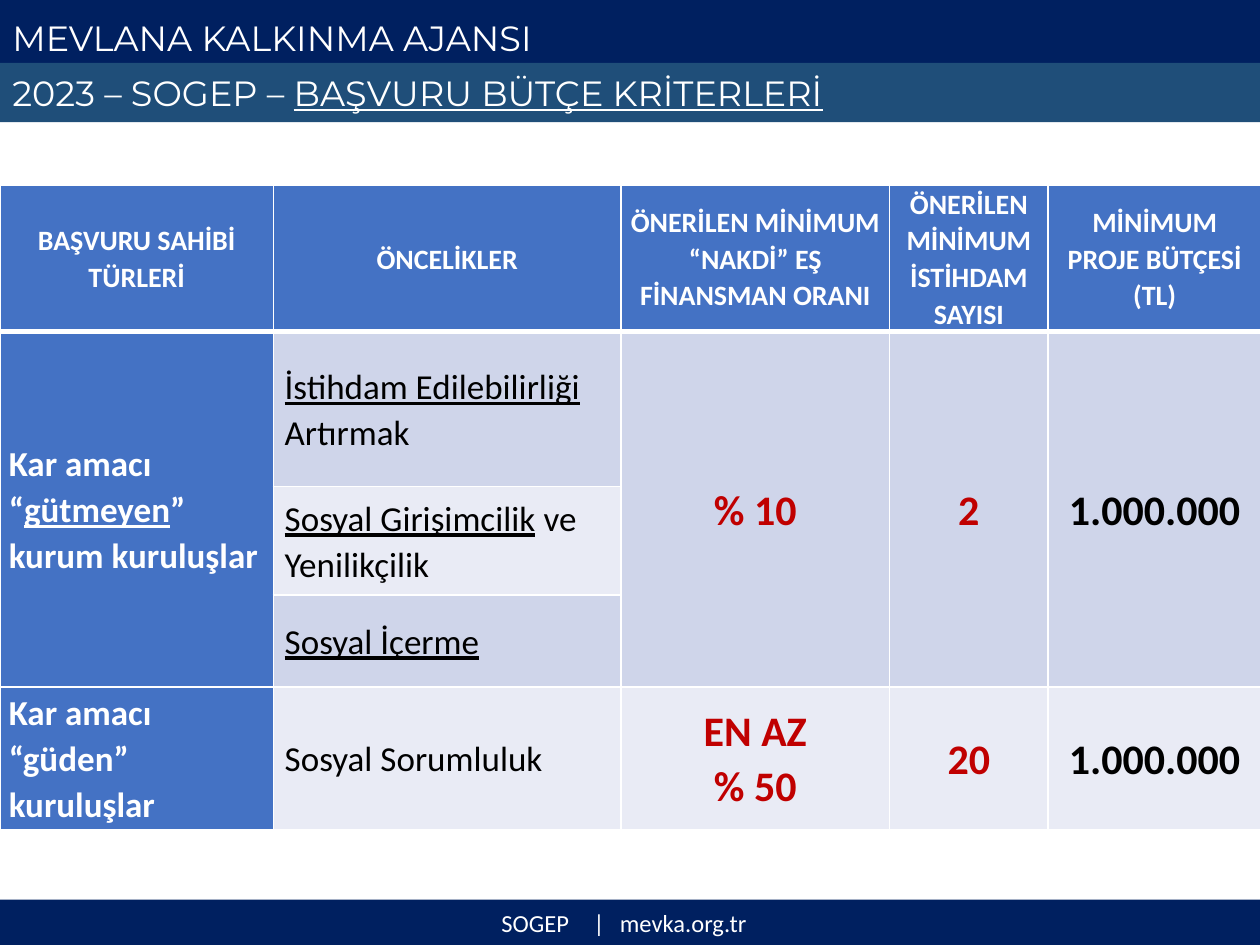
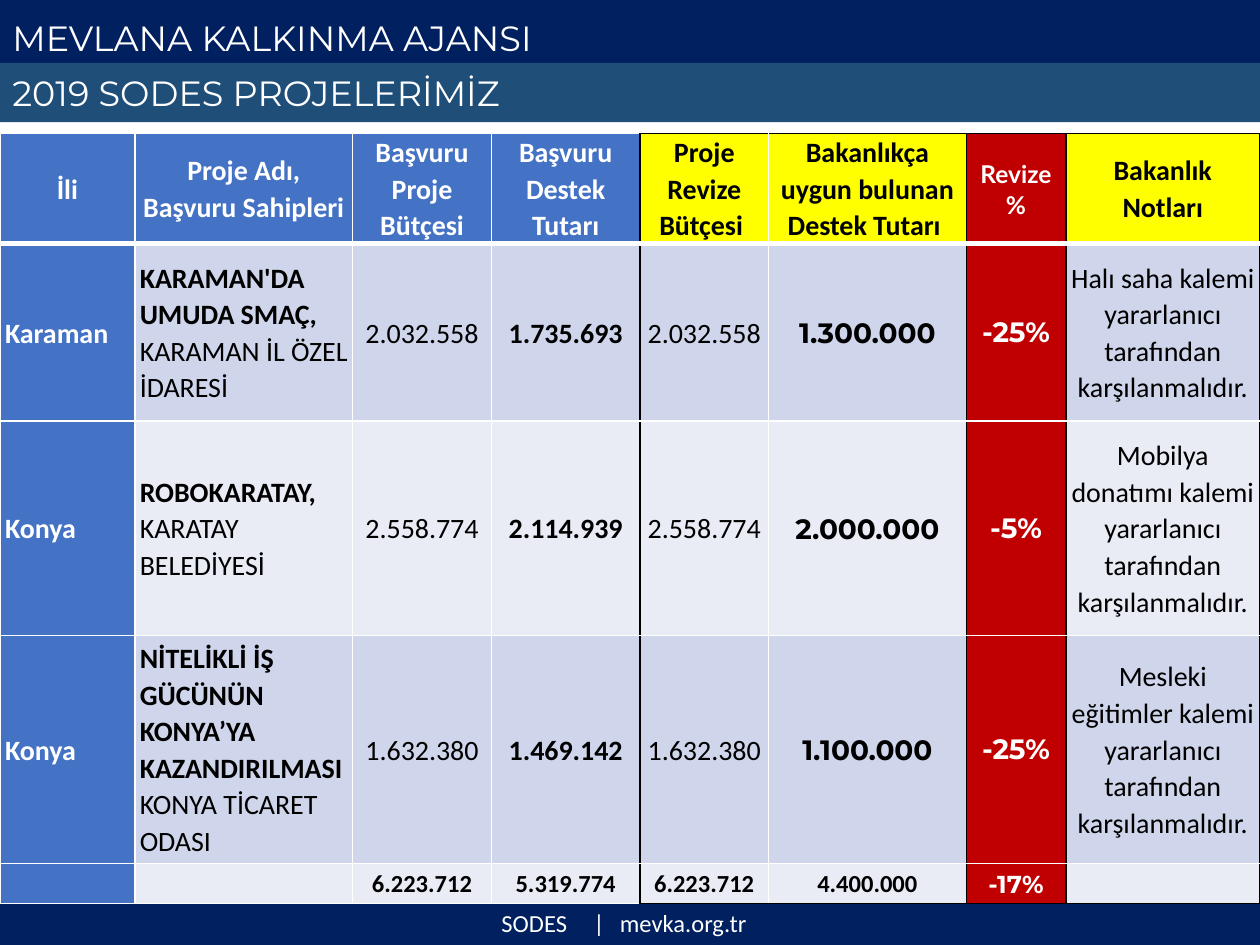
from lxml import etree
from pptx import Presentation
from pptx.dml.color import RGBColor
from pptx.enum.shapes import MSO_SHAPE
from pptx.enum.text import MSO_ANCHOR, PP_ALIGN
from pptx.oxml.ns import qn
from pptx.util import Inches, Pt

RECTANGLE = MSO_SHAPE.RECTANGLE
MIDDLE, BOTTOM = MSO_ANCHOR.MIDDLE, MSO_ANCHOR.BOTTOM
LEFT, CENTER = PP_ALIGN.LEFT, PP_ALIGN.CENTER

COLORS = {
    "navy": "002060", "teal": "1F4E79", "blue": "4472C4", "band_dark": "CFD5EA",
    "band_light": "E9EBF5", "red": "C00000", "yellow": "FFFF00",
    "white": "FFFFFF", "black": "000000",
}
SLIDE_WIDTH, SLIDE_HEIGHT = Inches(10), Inches(7.5)
COLUMN, ROW = SLIDE_WIDTH / 100, SLIDE_HEIGHT / 75

TITLE_BOX = (0, 0, 100, 5.2)
SUBTITLE_BOX = (0, 5, 100, 4.7)
FOOTER_BOX = (0, 71.4, 100, 3.6)
FOOTER_START, FOOTER_STOPS = 39.8, (7.3, 9.4)

HEADING = {"name": "Montserrat", "size": 20, "color": "white"}
FOOTING = {"name": "Calibri", "size": 14, "color": "white"}
TABLE_HEAD = {"name": "Calibri", "size": 16, "color": "white", "bold": True}
BODY = {"name": "Calibri", "size": 16, "color": "black"}
TIGHT = {"line_spacing": 1.07}
CENTERED = {**TIGHT, "alignment": CENTER}


def rgb(name):
    return RGBColor.from_string(COLORS[name])


def grid(box):
    left, top, width, height = box
    return (int(left * COLUMN), int(top * ROW), int(width * COLUMN), int(height * ROW))


def write(frame, paras, font, layout):
    for index, spans in enumerate(paras):
        para = frame.add_paragraph() if index else frame.paragraphs[0]
        for key, value in layout.items():
            setattr(para, key, value)
        for text, changes in spans:
            span = para.add_run()
            span.text = text
            style = {**font, **changes}
            span.font.color.rgb = rgb(style.pop("color"))
            span.font.size = Pt(style.pop("size"))
            for key, value in style.items():
                setattr(span.font, key, value)


def place_band(page, box, fill, spans, font, anchor=MIDDLE, layout=None):
    band = page.shapes.add_shape(RECTANGLE, *grid(box))
    band.shadow.inherit = False
    band.fill.solid()
    band.fill.fore_color.rgb = rgb(fill)
    band.line.fill.background()
    band.text_frame.word_wrap = True
    band.text_frame.vertical_anchor = anchor
    write(band.text_frame, [spans], font, {"alignment": LEFT, **(layout or {})})
    return band


def place_footer(page, box, program):
    text = f"{program}\t|\tmevka.org.tr"
    band = place_band(page, box, "navy", [(text, {})], FOOTING)
    band.text_frame.margin_left = int(FOOTER_START * COLUMN)
    properties = band.text_frame.paragraphs[0]._p.get_or_add_pPr()
    stops = etree.SubElement(properties, qn("a:tabLst"))
    for stop in FOOTER_STOPS:
        etree.SubElement(stops, qn("a:tab"), pos=str(int(stop * COLUMN)), algn="l")


def place_frame(page, subtitle, program):
    place_footer(page, FOOTER_BOX, program)
    place_band(page, TITLE_BOX, "navy", [("MEVLANA KALKINMA AJANSI", {})],
               HEADING, BOTTOM, {"line_spacing": 0.9})
    place_band(page, SUBTITLE_BOX, "teal", subtitle, HEADING)


def place_table(page, box, widths, heights):
    holder = page.shapes.add_table(len(heights), len(widths), *grid(box))
    table = holder.table
    table.first_row = table.horz_banding = False
    for column, width in zip(table.columns, widths):
        column.width = int(width * COLUMN)
    for row, height in zip(table.rows, heights):
        row.height = int(height * ROW)
    return table


def fill_cell(cell, fill, paras, font, layout, margin, indent=0):
    cell.vertical_anchor = MIDDLE
    cell.margin_left = cell.margin_right = int(margin * COLUMN)
    cell.margin_top = cell.margin_bottom = 0
    cell.fill.solid()
    cell.fill.fore_color.rgb = rgb(fill)
    write(cell.text_frame, paras, font, layout)
    for para in cell.text_frame.paragraphs:
        if indent:
            para._p.get_or_add_pPr().set("marL", str(int(indent * COLUMN)))
        if not para.runs:
            para._p.get_or_add_endParaRPr().set("sz", "1400")


def border_cell(cell, sides):
    properties = cell._tc.get_or_add_tcPr()
    for index, side in enumerate("LRTB"):
        color, width = sides[side]
        line = etree.Element(qn(f"a:ln{side}"), w=str(Pt(width)))
        solid = etree.SubElement(line, qn("a:solidFill"))
        etree.SubElement(solid, qn("a:srgbClr"), val=COLORS[color])
        properties.insert(index, line)


def border_table(table, marked_from=None):
    last_row, last_column = len(table.rows) - 1, len(table.columns) - 1
    for r in range(last_row + 1):
        for c in range(last_column + 1):
            sides = {side: ("white", 1) for side in "LRTB"}
            if r == 0:
                sides["B"] = ("white", 3)
            if r == 1:
                sides["T"] = ("white", 3)
            if marked_from is not None:
                dark = {marked_from, marked_from + 2, marked_from + 3, last_column + 1}
                tests = {"L": c in dark, "R": c + 1 in dark,
                         "T": r == 0 and c >= marked_from,
                         "B": r == last_row and c >= marked_from}
                sides.update({side: ("black", 1) for side, hit in tests.items() if hit})
            border_cell(table.cell(r, c), sides)


def place_criteria(page, box):
    margin = 0.7
    table = place_table(page, box, (21.7, 27.6, 21.3, 12.6, 16.9),
                        (11.6, 12.3, 8.6, 7.3, 11.3))
    heads = ("BAŞVURU SAHİBİ TÜRLERİ", "ÖNCELİKLER",
             "ÖNERİLEN MİNİMUM “NAKDİ” EŞ FİNANSMAN ORANI",
             "ÖNERİLEN MİNİMUM İSTİHDAM SAYISI", "MİNİMUM PROJE BÜTÇESİ (TL)")
    for c, head in enumerate(heads):
        fill_cell(table.cell(0, c), "blue", [[(head, {})]], TABLE_HEAD, CENTERED, margin)

    underlined = {"underline": True}
    priorities = (
        [("İstihdam Edilebilirliği", underlined), (" Artırmak", {})],
        [("Sosyal Girişimcilik", underlined), (" ve Yenilikçilik", {})],
        [("Sosyal İçerme", underlined)],
        [("Sosyal Sorumluluk", {})],
    )
    for r, spans in enumerate(priorities, 1):
        fill = "band_dark" if r % 2 else "band_light"
        fill_cell(table.cell(r, 1), fill, [spans], {**BODY, "size": 20}, TIGHT, margin, 0.2)

    groups = (
        (1, "band_dark",
         [("Kar amacı “", {}), ("gütmeyen", underlined), ("” kurum kuruluşlar", {})],
         ("% 10",), "2"),
        (4, "band_light", [("Kar amacı “güden” kuruluşlar", {})], ("EN AZ", "% 50"), "20"),
    )
    for r, fill, owner, rate, jobs in groups:
        fill_cell(table.cell(r, 0), "blue", [owner], {**TABLE_HEAD, "size": 20}, TIGHT, margin)
        figures = ((rate, "red"), ((jobs,), "red"), (("1.000.000",), "black"))
        for c, (lines, color) in enumerate(figures, 2):
            font = {**TABLE_HEAD, "size": 24, "color": color}
            fill_cell(table.cell(r, c), fill, [[(line, {})] for line in lines],
                      font, CENTERED, margin)
    border_table(table)
    for c in (0, 2, 3, 4):
        table.cell(1, c).merge(table.cell(3, c))


def place_projects(page, box):
    margin = 0.4
    table = place_table(page, box, (10.7, 17.3, 11, 11.8, 10.2, 15.7, 7.9, 15.4),
                        (8.4, 14.1, 17, 18.1, 3.2))
    black = {"color": "black"}
    heads = (
        ("İli", "blue", {}), ("Proje Adı, Başvuru Sahipleri", "blue", {}),
        ("Başvuru Proje Bütçesi", "blue", {}), ("Başvuru Destek Tutarı", "blue", {}),
        ("Proje Revize Bütçesi ", "yellow", black),
        ("Bakanlıkça uygun bulunan Destek Tutarı ", "yellow", black),
        ("Revize %", "red", {"size": 14, "name": "Lato"}),
        ("Bakanlık Notları", "yellow", black),
    )
    for c, (head, fill, changes) in enumerate(heads):
        fill_cell(table.cell(0, c), fill, [[(head, changes)]], TABLE_HEAD, CENTERED, margin)

    bold = {"bold": True}
    strong = {**bold, "name": "Montserrat"}
    percent = {**strong, "color": "white"}
    spaced = {"space_before": Pt(12), "space_after": Pt(12)}
    side, middle = {**TIGHT, **spaced}, {**CENTERED, **spaced}
    note_layout = {**CENTERED, "space_after": Pt(8)}
    projects = (
        ("Karaman", "KARAMAN'DA UMUDA SMAÇ, ", "KARAMAN İL ÖZEL İDARESİ",
         "2.032.558", "1.735.693", "1.300.000", "-25%", "Halı saha kalemi"),
        ("Konya", "ROBOKARATAY, ", "KARATAY BELEDİYESİ",
         "2.558.774", "2.114.939", "2.000.000", "-5%", "Mobilya donatımı kalemi"),
        ("Konya", "NİTELİKLİ İŞ GÜCÜNÜN KONYA’YA KAZANDIRILMASI ", "KONYA TİCARET ODASI",
         "1.632.380", "1.469.142", "1.100.000", "-25%", "Mesleki eğitimler kalemi"),
    )
    for r, (city, name, owner, budget, support, approved, cut, item) in enumerate(projects, 1):
        band = "band_dark" if r % 2 else "band_light"
        note = f"{item} yararlanıcı tarafından karşılanmalıdır."
        cells = (
            ("blue", [(city, {**bold, "color": "white"})], side, margin),
            (band, [(name, bold), (owner, {})], side, margin),
            (band, [(budget, {})], middle, margin),
            (band, [(support, bold)], middle, margin),
            (band, [(budget, {})], middle, margin),
            (band, [(approved, strong)], middle, margin),
            ("red", [(cut, percent)], {"alignment": CENTER}, 0.1),
            (band, [(note, {})], note_layout, margin),
        )
        for c, (fill, spans, layout, inset) in enumerate(cells):
            fill_cell(table.cell(r, c), fill, [spans], BODY, layout, inset)

    totals = ("", "", "6.223.712", "5.319.774", "6.223.712", "4.400.000", "-17%", "")
    fills = {0: "blue", 6: "red"}
    for c, total in enumerate(totals):
        spans = [(total, percent if c == 6 else bold)] if total else []
        fill_cell(table.cell(4, c), fills.get(c, "band_light"), [spans],
                  {**BODY, "size": 14}, middle, margin)
    border_table(table, marked_from=4)


def main():
    deck = Presentation()
    deck.slide_width, deck.slide_height = SLIDE_WIDTH, SLIDE_HEIGHT
    blank = deck.slide_layouts[6]

    criteria = deck.slides.add_slide(blank)
    place_frame(criteria, [("2023 – SOGEP – ", {}),
                           ("BAŞVURU BÜTÇE KRİTERLERİ", {"underline": True})], "SOGEP")
    place_criteria(criteria, (0, 14.7, 100, 51.1))

    projects = deck.slides.add_slide(blank)
    place_frame(projects, [("2019 SODES PROJELERİMİZ", {})], "SODES")
    place_projects(projects, (0, 10.6, 100, 60.8))

    deck.save("out.pptx")


if __name__ == "__main__":
    main()
